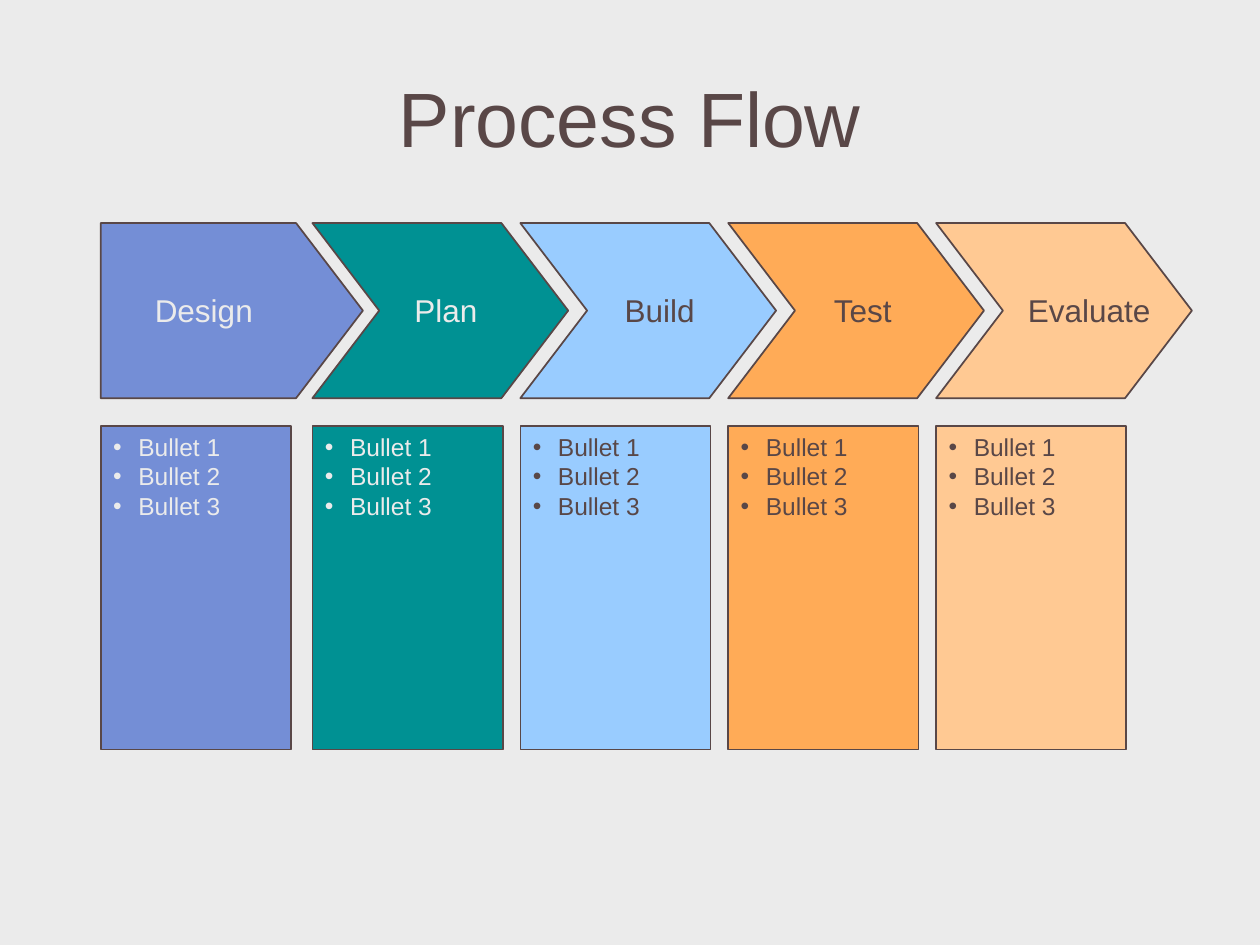
from pptx import Presentation
from pptx.dml.color import RGBColor
from pptx.enum.shapes import MSO_SHAPE as Kind
from pptx.enum.text import MSO_ANCHOR as Anchor, MSO_AUTO_SIZE as Auto, PP_ALIGN as Align
from pptx.oxml.ns import qn
from pptx.util import Inches, Pt
from lxml.etree import SubElement

FONT, DARK, PALE = "Arial", "594747", "EBEBEB"
# Grid: the first column stands apart, the rest follow at an equal pitch
FIRST, SECOND, PITCH = 0.8, 2.48, 1.65
ARROW_Y, ARROW_H, POINT = 1.77, 1.39, 0.53
BOX_Y, BOX_W, BOX_H = 3.38, 1.51, 2.57
LABEL_Y, LABEL_H = 2.26, 0.4
BULLETS = ["Bullet 1", "Bullet 2", "Bullet 3"]

# Step name, fill, text colour, label left, label width
STEPS = [
    ("Design", "748ED6", PALE, 1.13, 0.98),
    ("Plan", "009193", PALE, 3.19, 0.7),
    ("Build", "99CCFF", DARK, 4.86, 0.76),
    ("Test", "FFAB57", DARK, 6.52, 0.69),
    ("Evaluate", "FFC993", DARK, 8.06, 1.17),
]


def paint(target, color):
    """Set a fill to a solid hex colour."""
    target.solid()
    target.fore_color.rgb = RGBColor.from_string(color)


def write(para, text, size, color):
    run = para.add_run()
    run.text = text
    run.font.name, run.font.size = FONT, Pt(size)
    paint(run.font.fill, color)


def place(item, *spot):
    item.left, item.top, item.width, item.height = map(Inches, spot)


def add_title(slide, text):
    title = slide.shapes.title
    place(title, 0.5, 0.3, 9, 1.25)
    title.text_frame.vertical_anchor = Anchor.MIDDLE
    para = title.text_frame.paragraphs[0]
    para.alignment = Align.CENTER
    write(para, text, 44, DARK)


def add_block(slide, kind, spot, fill):
    block = slide.shapes.add_shape(kind, *map(Inches, spot))
    block.shadow.inherit = False
    paint(block.fill, fill)
    paint(block.line.fill, DARK)
    block.line.width = Pt(1)
    return block


def add_arrow(slide, left, fill, first):
    kind = Kind.PENTAGON if first else Kind.CHEVRON
    width = 2.08 if first else 2.03
    arrow = add_block(slide, kind, (left, ARROW_Y, width, ARROW_H), fill)
    arrow.adjustments[0] = POINT / ARROW_H


def add_list(slide, left, fill, color):
    box = add_block(slide, Kind.RECTANGLE, (left, BOX_Y, BOX_W, BOX_H), fill)
    frame = box.text_frame
    frame.word_wrap = True
    frame.vertical_anchor = Anchor.TOP
    for i, text in enumerate(BULLETS):
        para = frame.add_paragraph() if i else frame.paragraphs[0]
        para.alignment = Align.LEFT
        # Hanging bullet
        props = para._p.get_or_add_pPr()
        props.set("marL", str(Inches(0.2)))
        props.set("indent", str(-Inches(0.2)))
        SubElement(props, qn("a:buFont"), typeface=FONT)
        SubElement(props, qn("a:buChar"), char="•")
        write(para, text, 14, color)


def add_label(slide, text, left, width, color):
    spot = (left, LABEL_Y, width, LABEL_H)
    frame = slide.shapes.add_textbox(*map(Inches, spot)).text_frame
    frame.word_wrap = False
    frame.auto_size = Auto.SHAPE_TO_FIT_TEXT
    write(frame.paragraphs[0], text, 18, color)


def main():
    deck = Presentation()
    deck.slide_width, deck.slide_height = Inches(10), Inches(7.5)
    slide = deck.slides.add_slide(deck.slide_layouts[5])
    paint(slide.background.fill, PALE)
    add_title(slide, "Process Flow")

    # One column per step: list, arrow, label
    for col, (name, fill, color, left, width) in enumerate(STEPS):
        x = SECOND + PITCH * (col - 1) if col else FIRST
        add_list(slide, x, fill, color)
        add_arrow(slide, x, fill, col == 0)
        add_label(slide, name, left, width, color)
    deck.save("out.pptx")


if __name__ == "__main__":
    main()
